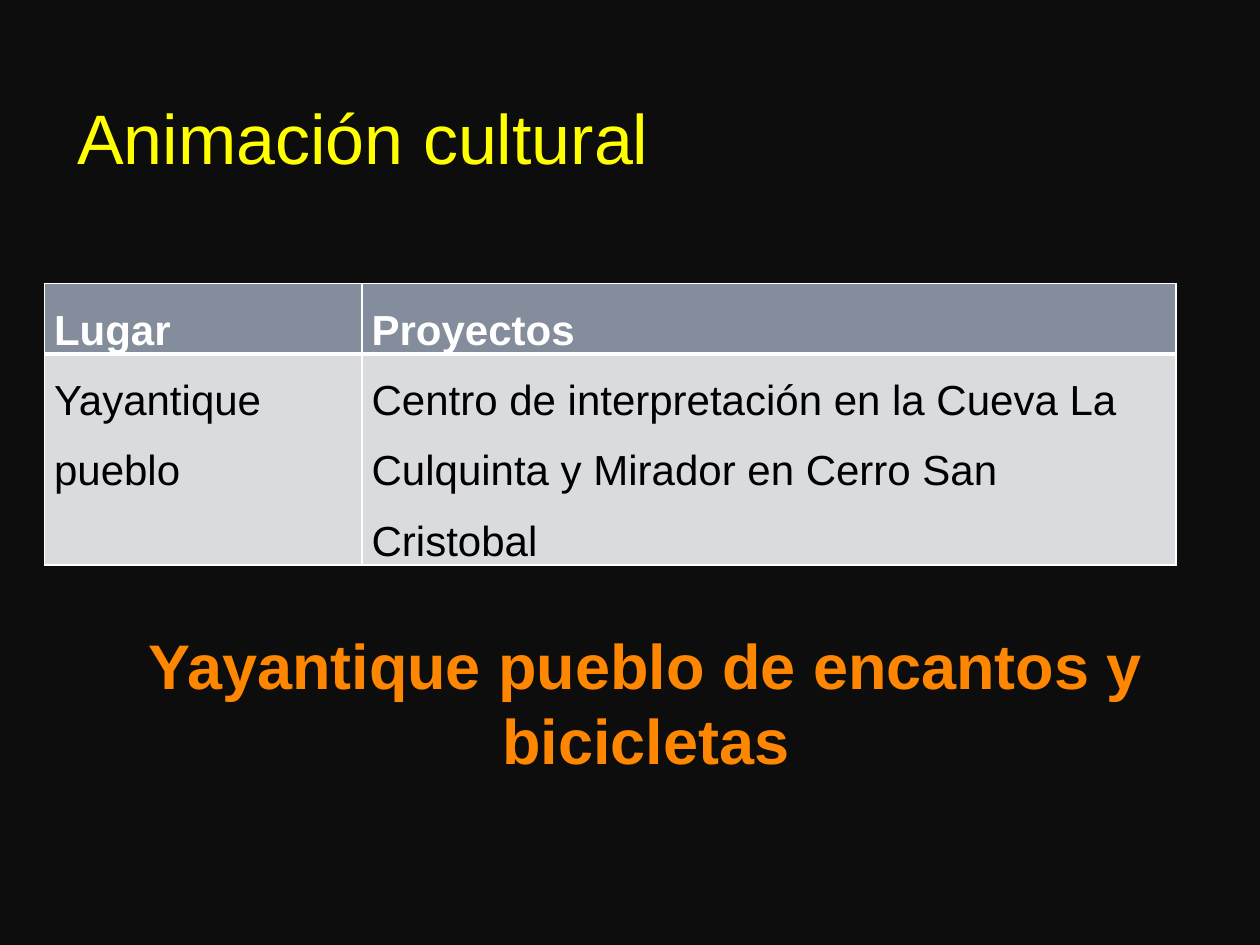
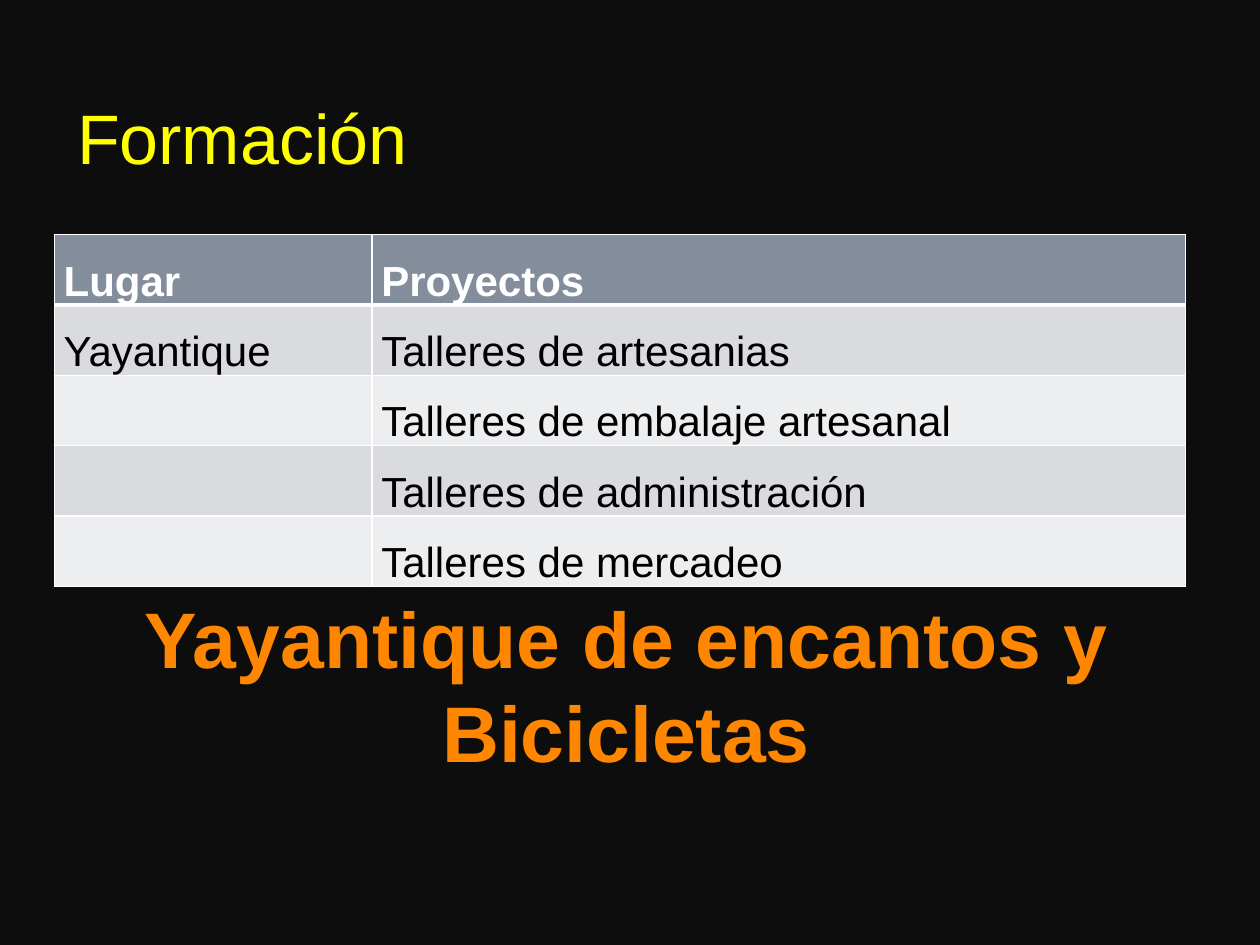
from lxml.etree import SubElement
from pptx import Presentation
from pptx.dml.color import RGBColor
from pptx.enum.text import MSO_ANCHOR as Anchor, PP_ALIGN as Align
from pptx.oxml.ns import qn
from pptx.util import Pt

COLORS = {
    "background": "0D0D0D", "title": "FFFF00", "slogan": "FF8600",
    "header": "838D9B", "odd_row": "D9DBDE", "even_row": "EDEEEF",
    "border": "FFFFFF", "header_text": "FFFFFF", "body_text": "000000",
}
FONT = "Arial"
HEADINGS = ("Lugar", "Proyectos")
COLUMN_WIDTHS = (181.5, 465)
LINE_HEIGHT = 40.2
TITLE_AREA = (37, 15, 584, 90.5)

SLIDES = [
    {
        "title": "Animación cultural",
        "table_at": (25.5, 162),
        "projects": [
            ("Yayantique pueblo",
             "Centro de interpretación en la Cueva La Culquinta "
             "y Mirador en Cerro San Cristobal"),
        ],
        "slogan": "Yayantique pueblo de encantos y bicicletas",
        "slogan_area": (36.5, 366.5, 629, 124.5),
        "slogan_size": 36,
    },
    {
        "title": "Formación",
        "table_at": (31, 134),
        "projects": [
            ("Yayantique", "Talleres de artesanias"),
            ("", "Talleres de embalaje artesanal"),
            ("", "Talleres de administración"),
            ("", "Talleres de mercadeo"),
        ],
        "slogan": "Yayantique de encantos y Bicicletas",
        "slogan_area": (-14.5, 354, 708.5, 148.5),
        "slogan_size": 45,
    },
]


def rgb(name):
    return RGBColor.from_string(COLORS[name])


def apply(target, formats):
    for name, value in formats.items():
        setattr(target, name, value)


def write(para, text, color, size, bold=False):
    span = para.add_run()
    span.text = text
    apply(span.font, {"name": FONT, "size": Pt(size), "bold": bold})
    span.font.color.rgb = rgb(color)


def add_text(page, area, text, color, size, bold=False, frame={}, paragraph={}):
    box = page.shapes.add_textbox(*map(Pt, area))
    apply(box.text_frame, {"word_wrap": True, "vertical_anchor": Anchor.BOTTOM, **frame})
    para = box.text_frame.paragraphs[0]
    apply(para, paragraph)
    write(para, text, color, size, bold)
    return para


def add_slogan(page, content):
    size = content["slogan_size"]
    para = add_text(
        page, content["slogan_area"], content["slogan"], "slogan", size, True,
        frame={"margin_bottom": Pt(3.6 + 1.2 * size)},
        paragraph={"alignment": Align.CENTER})
    properties = para._p.get_or_add_pPr()
    properties.set("marL", str(Pt(36)))
    properties.set("indent", "0")


def add_borders(cell, widths):
    properties = cell._tc.get_or_add_tcPr()
    for side, width in widths.items():
        line = SubElement(properties, qn(f"a:ln{side}"), w=str(Pt(width)))
        fill = SubElement(line, qn("a:solidFill"))
        SubElement(fill, qn("a:srgbClr"), val=COLORS["border"])


def add_projects(page, content):
    rows = [HEADINGS, *content["projects"]]
    left, top = content["table_at"]
    table = page.shapes.add_table(
        len(rows), len(HEADINGS), Pt(left), Pt(top),
        Pt(sum(COLUMN_WIDTHS)), Pt(LINE_HEIGHT * len(rows))).table
    apply(table, {"first_row": False, "horz_banding": False})
    for column, width in zip(table.columns, COLUMN_WIDTHS):
        column.width = Pt(width)
    for index, texts in enumerate(rows):
        table.rows[index].height = Pt(LINE_HEIGHT)
        is_header = index == 0
        fill = "header" if is_header else "odd_row" if index % 2 else "even_row"
        color = "header_text" if is_header else "body_text"
        borders = {"L": 1, "R": 1, "T": 3 if index == 1 else 1, "B": 3 if is_header else 1}
        for column, text in enumerate(texts):
            cell = table.cell(index, column)
            add_borders(cell, borders)
            cell.fill.solid()
            cell.fill.fore_color.rgb = rgb(fill)
            apply(cell, {"margin_left": Pt(5.4), "margin_right": Pt(5.4),
                         "margin_top": 0, "margin_bottom": 0})
            if text:
                para = cell.text_frame.paragraphs[0]
                para.line_spacing = Pt(LINE_HEIGHT)
                write(para, text, color, 24, is_header)


def main():
    deck = Presentation()
    apply(deck, {"slide_width": Pt(720), "slide_height": Pt(540)})
    for content in SLIDES:
        page = deck.slides.add_slide(deck.slide_layouts[6])
        page.background.fill.solid()
        page.background.fill.fore_color.rgb = rgb("background")
        add_text(page, TITLE_AREA, content["title"], "title", 40)
        add_projects(page, content)
        add_slogan(page, content)
    deck.save("out.pptx")


if __name__ == "__main__":
    main()
